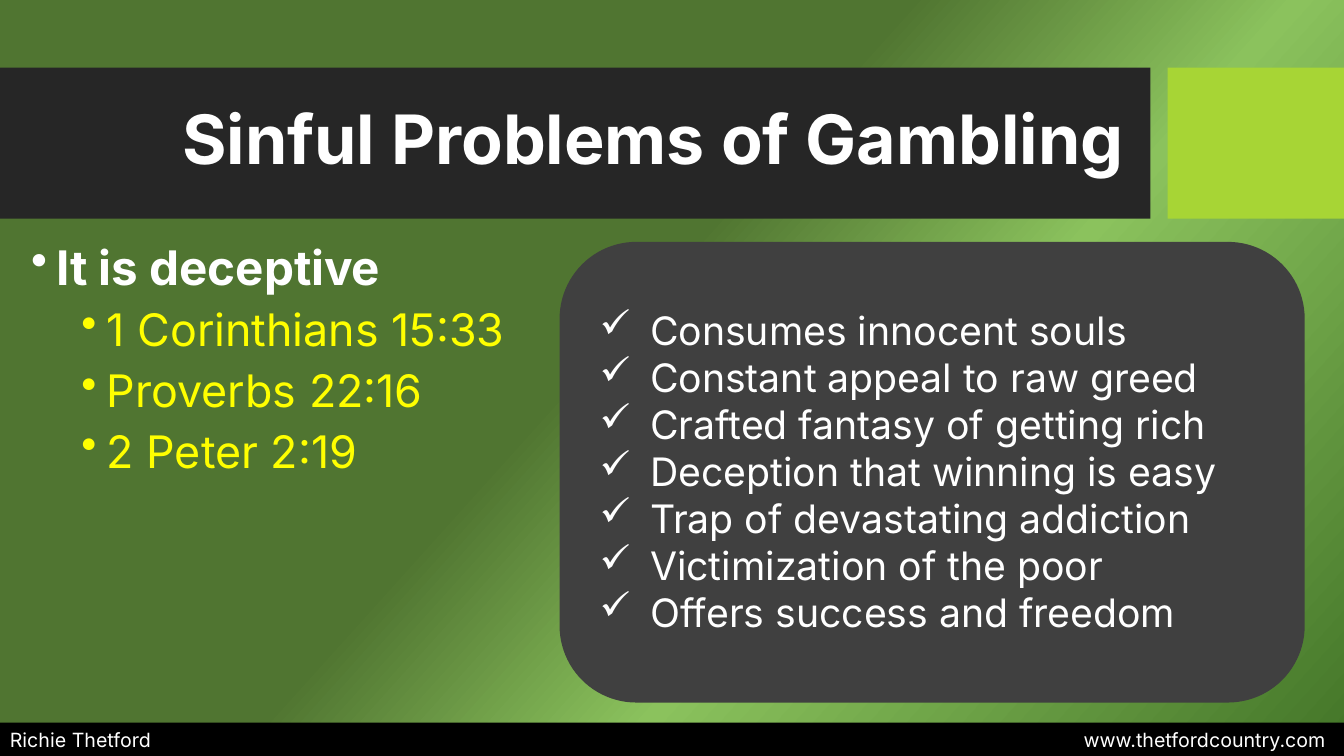
from dataclasses import dataclass

from lxml import etree
from pptx import Presentation
from pptx import util as u
from pptx.dml.color import RGBColor
from pptx.enum import shapes, text
from pptx.oxml import ns


@dataclass(frozen=True)
class Theme:
    font: str = "Inter"
    white: str = "FFFFFF"
    verse: str = "FFFF00"
    band: str = "262626"
    accent: str = "A7D535"
    panel: str = "404040"
    footer: str = "000000"
    gradient: tuple = ((45, "507531"), (64, "8BC25D"), (100, "437528"))
    gradient_angle: int = 42
    title_size: float = 48.6
    topic_size: int = 34
    verse_size: int = 32
    list_size: int = 28
    footer_size: int = 14


THEME = Theme()
WIDTH, HEIGHT = 13.33, 7.5
TOPIC = "It is deceptive"
VERSES = ("1 Corinthians 15:33", "Proverbs 22:16", "2 Peter 2:19")
DECEPTIONS = (
    "Consumes innocent souls",
    "Constant appeal to raw greed",
    "Crafted fantasy of getting rich",
    "Deception that winning is easy",
    "Trap of devastating addiction",
    "Victimization of the poor",
    "Offers success and freedom",
)


def add_child(parent, tag, **attributes):
    return etree.SubElement(parent, ns.qn(tag), attributes)


def add_block(page, box, color, kind=shapes.MSO_SHAPE.RECTANGLE):
    block = page.shapes.add_shape(kind, *map(u.Inches, box))
    block.shadow.inherit = False
    block.fill.solid()
    block.fill.fore_color.rgb = RGBColor.from_string(color)
    block.line.fill.background()
    return block


def add_text(page, box, anchor=text.MSO_ANCHOR.TOP):
    frame = page.shapes.add_textbox(*map(u.Inches, box)).text_frame
    frame.word_wrap = True
    frame.vertical_anchor = anchor
    return frame


def write(para, words, size, color=THEME.white, bold=False):
    para.text = words
    for span in para.runs:
        span.font.name = THEME.font
        span.font.size = u.Pt(size)
        span.font.bold = bold
        span.font.color.rgb = RGBColor.from_string(color)


def add_bullet(para, mark, left, hang):
    properties = para._p.get_or_add_pPr()
    properties.set("marL", str(u.Inches(left)))
    properties.set("indent", str(-u.Inches(hang)))
    add_child(properties, "a:buChar", char=mark)


def paint_background(page):
    fill = page.background.fill
    fill.gradient()
    fill.gradient_angle = 360 - THEME.gradient_angle
    stops = next(page.element.iter(ns.qn("a:gsLst")))
    for stop in list(stops):
        stops.remove(stop)
    for position, color in THEME.gradient:
        stop = add_child(stops, "a:gs", pos=str(position * 1000))
        add_child(stop, "a:srgbClr", val=color)


def add_header(page, box, title):
    left, top, width, height = box
    accent_width, gap = 1.75, 0.17
    band_width = width - accent_width - gap
    add_block(page, (left, top, band_width, height), THEME.band)
    add_block(page, (left + width - accent_width, top, accent_width, height), THEME.accent)
    frame = add_text(page, (left + 0.74, top + 0.15, band_width - 0.9, 1.18),
                     text.MSO_ANCHOR.MIDDLE)
    para = frame.paragraphs[0]
    para.alignment = text.PP_ALIGN.RIGHT
    para.line_spacing = 0.9
    write(para, title, THEME.title_size, bold=True)


def add_verses(page, box, topic, verses):
    frame = add_text(page, box)
    para = frame.paragraphs[0]
    add_bullet(para, "•", 0.25, 0.25)
    write(para, topic, THEME.topic_size, bold=True)
    for verse in verses:
        para = frame.add_paragraph()
        para.level = 1
        para.space_before = u.Pt(5)
        add_bullet(para, "•", 0.75, 0.25)
        write(para, verse, THEME.verse_size, THEME.verse)


def add_panel(page, box, items):
    left, top, width, height = box
    add_block(page, box, THEME.panel, shapes.MSO_SHAPE.ROUNDED_RECTANGLE)
    frame = add_text(page, (left + 0.3, top + 0.59, width - 0.56, height - 1.17))
    for index, item in enumerate(items):
        para = frame.add_paragraph() if index else frame.paragraphs[0]
        add_bullet(para, "✓", 0.5, 0.5)
        write(para, item, THEME.list_size)


def add_footer(page, box, author, site):
    frame = add_block(page, box, THEME.footer).text_frame
    frame.word_wrap = True
    frame.vertical_anchor = text.MSO_ANCHOR.MIDDLE
    para = frame.paragraphs[0]
    para.alignment = text.PP_ALIGN.LEFT
    tabs = add_child(para._p.get_or_add_pPr(), "a:tabLst")
    add_child(tabs, "a:tab", pos=str(u.Inches(box[2] - 0.28)), algn="r")
    write(para, f"{author}\t{site}", THEME.footer_size)


def build_slide(deck):
    page = deck.slides.add_slide(deck.slide_layouts[6])
    paint_background(page)
    add_header(page, (0, 0.67, WIDTH, 1.5), "Sinful Problems of Gambling")
    add_verses(page, (0.21, 2.31, 5.3, 4.74), TOPIC, VERSES)
    add_footer(page, (0, 7.17, WIDTH, 0.34), "Richie Thetford", "www.thetfordcountry.com")
    add_panel(page, (5.55, 2.4, 7.39, 4.57), DECEPTIONS)


def main():
    deck = Presentation()
    deck.slide_width, deck.slide_height = u.Inches(WIDTH), u.Inches(HEIGHT)
    build_slide(deck)
    deck.save("out.pptx")


if __name__ == "__main__":
    main()
